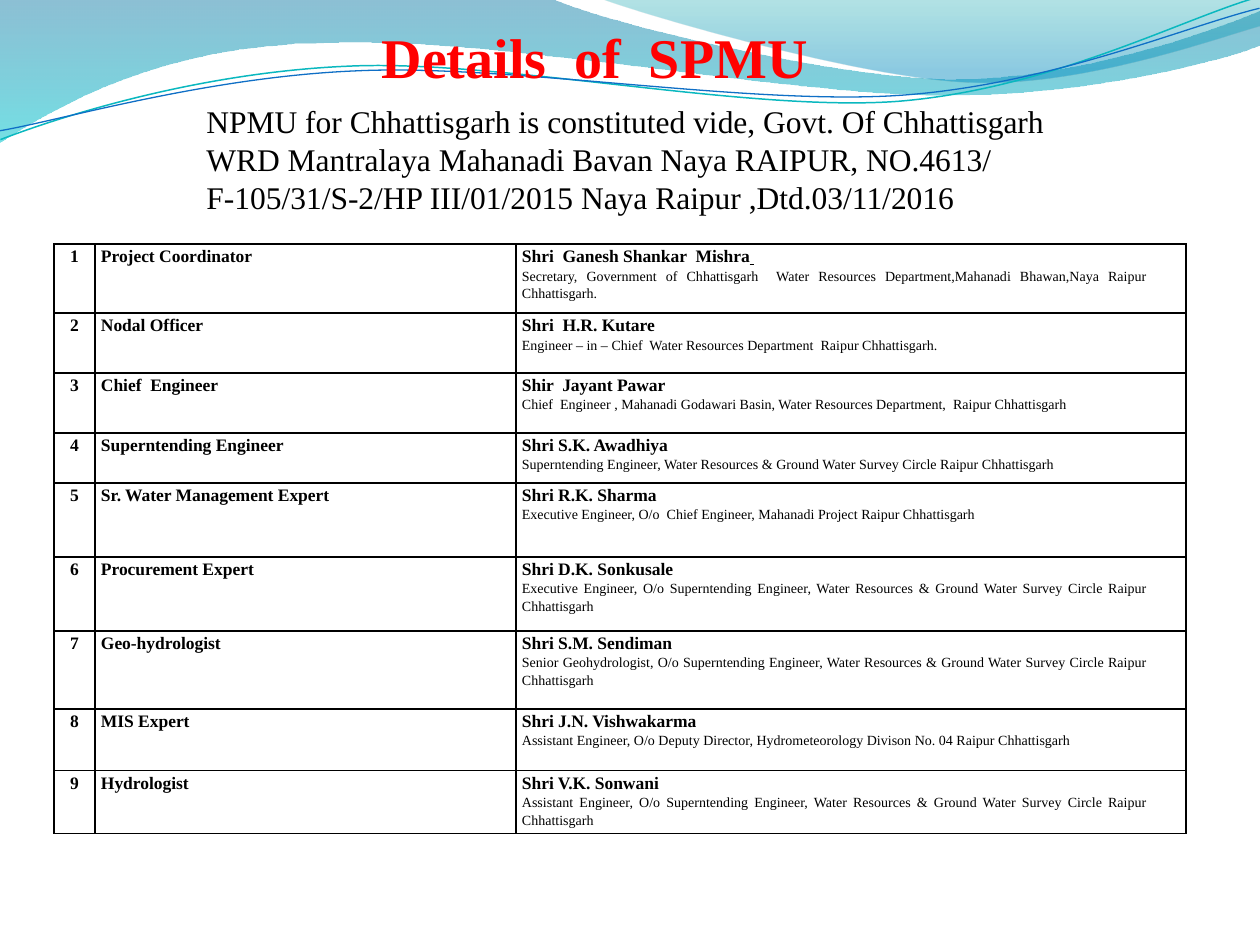
import lxml.etree
import pptx
import pptx.dml.color
import pptx.enum.text
import pptx.oxml.ns
import pptx.util

RGB = pptx.dml.color.RGBColor
ALIGN = pptx.enum.text.PP_ALIGN
ANCHOR = pptx.enum.text.MSO_ANCHOR
qn = pptx.oxml.ns.qn

BLACK = RGB(0x00, 0x00, 0x00)
RED = RGB(0xFF, 0x00, 0x00)
TEAL = RGB(0x0A, 0xB8, 0xBF)
BLUE = RGB(0x0F, 0x6F, 0xC6)
DEEP_BLUE = RGB(0x00, 0x74, 0xA1)
AQUA = RGB(0x00, 0xC6, 0xCF)
SEA_GREEN = RGB(0x00, 0xA1, 0xA9)
SKY = RGB(0x00, 0x8B, 0xBF)

PX = 914400 / 126
TILT = -2.7

# Each wave is a start point followed by straight (x, y) or cubic (x1, y1, x2, y2, x, y) parts
BACK_WAVE = [(0, 0), (554, 0), (600, 21, 837, 79, 955, 79), (1074, 79, 1207, 33, 1260, 11),
             (1260, 45), (1239, 55, 1096, 96, 940, 95), (784, 95, 481, 35, 324, 43),
             (163, 45, 58, 105, 0, 142)]
FRONT_WAVE = [(604, 0), (641, 14, 859, 78, 969, 82), (1079, 87, 1211, 40, 1260, 26), (1260, 0)]
# Drawn level, then tilted
TEAL_LINE = [(-2, 110), (58, 90, 199, 52, 350, 53), (499, 53, 745, 118, 896, 114),
             (1049, 109, 1184, 45, 1260, 27)]
BLUE_LINE = [(-2, 101), (57, 94, 207, 57, 357, 58), (509, 58, 750, 112, 902, 108),
             (1052, 104, 1189, 52, 1262, 38)]

CIRCLE = "Water Resources & Ground Water Survey Circle Raipur Chhattisgarh"
MEMBERS = [  # row height, role, name, post
    (69, "Project Coordinator", "Shri  Ganesh Shankar  Mishra",
     "Secretary, Government of Chhattisgarh  Water Resources Department,"
     "Mahanadi Bhawan,Naya Raipur Chhattisgarh."),
    (60, "Nodal Officer", "Shri  H.R. Kutare",
     "Engineer – in – Chief  Water Resources Department  Raipur Chhattisgarh."),
    (60, "Chief  Engineer", "Shir  Jayant Pawar",
     "Chief  Engineer , Mahanadi Godawari Basin, Water Resources Department,  Raipur Chhattisgarh"),
    (50, "Superntending Engineer", "Shri S.K. Awadhiya", "Superntending Engineer, " + CIRCLE),
    (74, "Sr. Water Management Expert", "Shri R.K. Sharma",
     "Executive Engineer, O/o  Chief Engineer, Mahanadi Project Raipur Chhattisgarh"),
    (74, "Procurement Expert", "Shri D.K. Sonkusale",
     "Executive Engineer, O/o Superntending Engineer, " + CIRCLE),
    (78, "Geo-hydrologist", "Shri S.M. Sendiman",
     "Senior Geohydrologist, O/o Superntending Engineer, " + CIRCLE),
    (62, "MIS Expert", "Shri J.N. Vishwakarma",
     "Assistant Engineer, O/o Deputy Director, Hydrometeorology Divison No. 04 Raipur Chhattisgarh"),
    (63, "Hydrologist", "Shri V.K. Sonwani",
     "Assistant Engineer, O/o Superntending Engineer, " + CIRCLE),
]


def px(n):
    return pptx.util.Emu(round(n * PX))


class Deck:
    font = "Times New Roman"

    def __init__(self, width, height):
        self.prs = pptx.Presentation()
        self.prs.slide_width, self.prs.slide_height = px(width), px(height)
        self.slide = self.prs.slides.add_slide(self.prs.slide_layouts[5])

    def style(self, p, size, color=BLACK, bold=False, align=ALIGN.LEFT, spacing=None):
        p.alignment = align
        p.line_spacing = spacing
        for r in p.runs:
            r.font.name, r.font.size = self.font, pptx.util.Pt(size)
            r.font.bold, r.font.color.rgb = bold, color

    def outline(self, parts, close):
        points = [part[i:i + 2] for part in parts for i in range(0, len(part), 2)]
        builder = self.slide.shapes.build_freeform(*points[0], scale=PX)
        builder.add_line_segments(points[1:], close=close)
        sp = builder.convert_to_shape()
        sp.shadow.inherit = False
        # Merge the three points of each cubic part into one curve segment
        segments = iter(list(sp._element.iter(qn("a:lnTo"))))
        for part in parts[1:]:
            first = next(segments)
            if len(part) == 6:
                first.tag = qn("a:cubicBezTo")
                for _ in range(2):
                    extra = next(segments)
                    first.append(extra[0])
                    extra.getparent().remove(extra)
        return sp

    def wave(self, parts, stops):
        sp = self.outline(parts, True)
        sp.line.fill.background()
        sp.fill.gradient()
        sp.fill.gradient_angle = 270
        for stop, (position, color, _) in zip(sp.fill.gradient_stops, stops):
            stop.position, stop.color.rgb = position, color
        for clr, (_, _, opacity) in zip(sp._element.spPr.iter(qn("a:srgbClr")), stops):
            lxml.etree.SubElement(clr, qn("a:alpha"), val=str(opacity * 1000))

    def curve(self, parts, color, width):
        sp = self.outline(parts, False)
        sp.rotation = TILT
        sp.fill.background()
        sp.line.color.rgb, sp.line.width = color, pptx.util.Pt(width)

    def title(self, text, left, top, width, height):
        sp = self.slide.shapes.title
        self.slide.shapes._spTree.append(sp._element)  # in front of the waves
        sp.left, sp.top, sp.width, sp.height = map(px, (left, top, width, height))
        tf = sp.text_frame
        tf.text = text
        tf.vertical_anchor = ANCHOR.TOP
        tf.auto_size = pptx.enum.text.MSO_AUTO_SIZE.NONE
        self.style(tf.paragraphs[0], 32, RED, True)

    def text(self, text, left, top, width, height, size):
        tf = self.slide.shapes.add_textbox(*map(px, (left, top, width, height))).text_frame
        tf.word_wrap = True
        tf.text = text
        self.style(tf.paragraphs[0], size)

    def cell(self, cell, lines, align, right=6):
        cell.margin_left, cell.margin_right = px(6), px(right)
        cell.margin_top = cell.margin_bottom = 0
        cell.fill.background()
        tf = cell.text_frame
        tf.text = "\n".join(lines)
        for i, p in enumerate(tf.paragraphs):
            self.style(p, 8 if i else 10, bold=i == 0, align=align, spacing=1.15)
        tcPr = cell._tc.get_or_add_tcPr()
        for i, side in enumerate(("lnL", "lnR", "lnT", "lnB")):
            ln = tcPr.makeelement(qn("a:" + side), {"w": str(pptx.util.Pt(1))})
            fill = lxml.etree.SubElement(ln, qn("a:solidFill"))
            lxml.etree.SubElement(fill, qn("a:srgbClr"), val=str(BLACK))
            tcPr.insert(i, ln)

    def table(self, members, left, top, widths):
        total = sum(m[0] for m in members)
        table = self.slide.shapes.add_table(len(members), len(widths), px(left), px(top),
                                            px(sum(widths)), px(total)).table
        table.first_row = table.horz_banding = False
        for column, width in zip(table.columns, widths):
            column.width = px(width)
        for i, (height, role, name, post) in enumerate(members):
            table.rows[i].height = px(height)
            self.cell(table.cell(i, 0), [str(i + 1)], ALIGN.CENTER)
            self.cell(table.cell(i, 1), [role], ALIGN.JUSTIFY)
            self.cell(table.cell(i, 2), [name, post], ALIGN.JUSTIFY, right=38)
        return table


def main():
    deck = Deck(1260, 945)

    # Wave header
    deck.wave(BACK_WAVE, [(0, DEEP_BLUE, 45), (1, AQUA, 55)])
    deck.wave(FRONT_WAVE, [(0, SEA_GREEN, 30), (0.8, SKY, 45)])
    deck.curve(TEAL_LINE, TEAL, 0.85)
    deck.curve(BLUE_LINE, BLUE, 0.75)

    # Title
    deck.title("Details  of  SPMU", 369, 16, 489, 81)

    # Members, with an underlined space after the coordinator's name
    table = deck.table(MEMBERS, 54, 244, (41, 421, 670))
    p = table.cell(0, 2).text_frame.paragraphs[0]
    r = p.add_run()
    r.text = " "
    r.font.underline = True
    deck.style(p, 10, bold=True, align=ALIGN.JUSTIFY, spacing=1.15)

    # Constitution order
    deck.text("NPMU for Chhattisgarh is constituted vide, Govt. Of Chhattisgarh WRD Mantralaya "
              "Mahanadi Bavan Naya RAIPUR, NO.4613/ F-105/31/S-2/HP III/01/2015 Naya Raipur "
              ",Dtd.03/11/2016", 194, 96, 873, 127, 18)

    deck.prs.save("out.pptx")


if __name__ == "__main__":
    main()
